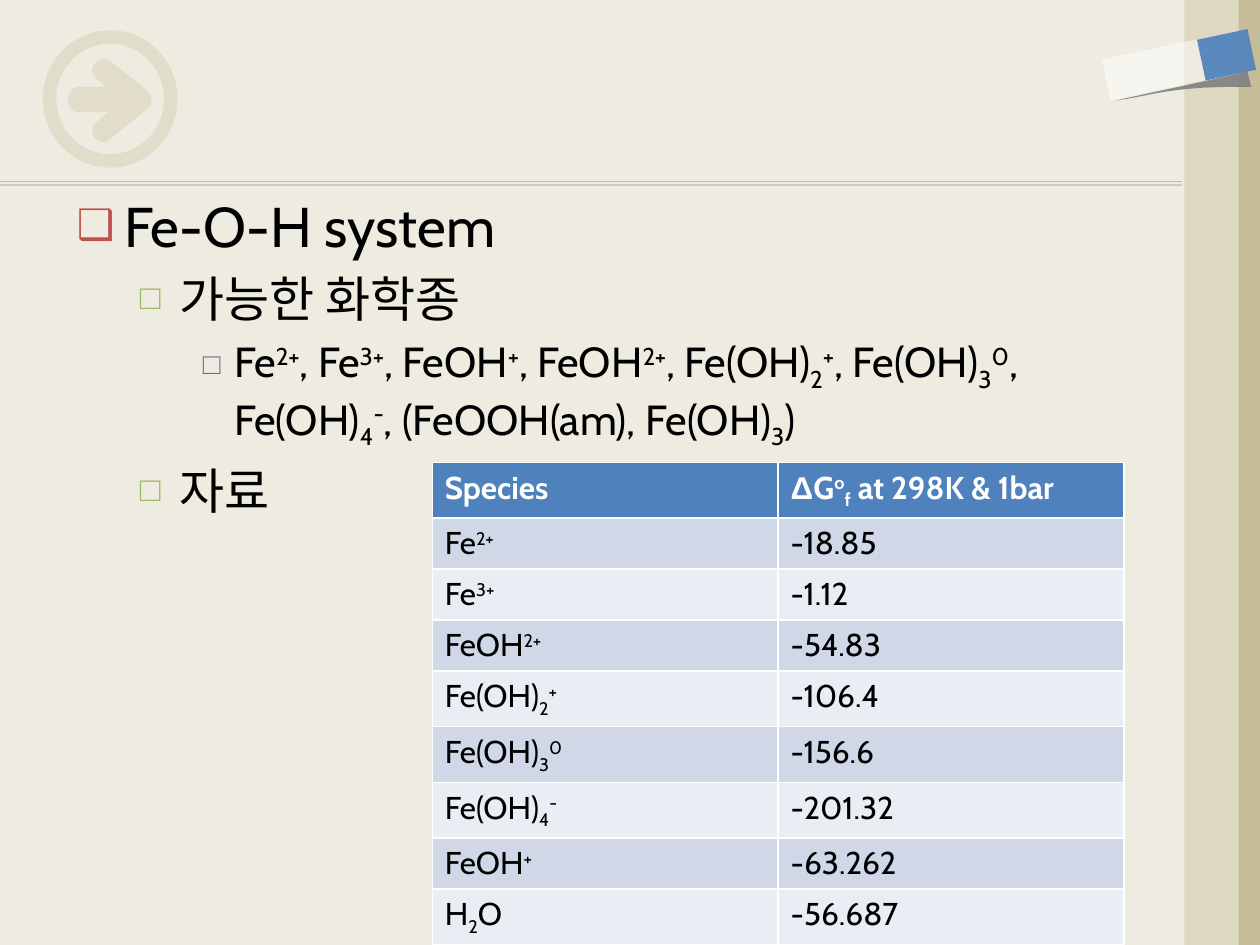
from lxml import etree
from pptx import Presentation
from pptx import util as u
from pptx.dml import color
from pptx.enum import shapes, text
from pptx.oxml import ns

Pt = u.Pt


def rgb(hex_code):
    return color.RGBColor.from_string(hex_code)


def add_node(parent, tag, **attributes):
    values = {key: str(value) for key, value in attributes.items()}
    return etree.SubElement(parent, ns.qn(tag), values)


def bezier(start, control_1, control_2, end, steps=8):
    for step in range(1, steps + 1):
        t = step / steps
        weights = ((1 - t) ** 3, 3 * t * (1 - t) ** 2, 3 * t * t * (1 - t), t ** 3)
        corners = (start, control_1, control_2, end)
        yield tuple(sum(w * c[axis] for w, c in zip(weights, corners)) for axis in (0, 1))


class Deck:
    font = "Cabin"
    ink = "000000"
    accent = "4F81BD"
    tan = "C4BD97"
    bands = ("E9EDF4", "D0D8E8")
    bullets = (("❑", "C0504D", 75, 32), ("□", "9BBB59", 70, 28), ("□", "8064A2", 70, 24))

    def __init__(self):
        self.prs = Presentation()
        self.prs.slide_width, self.prs.slide_height = Pt(720), Pt(540)
        self.slide = self.prs.slides.add_slide(self.prs.slide_layouts[1])
        title = self.slide.shapes.title
        title.element.getparent().remove(title.element)
        background = self.slide.background.fill
        background.solid()
        background.fore_color.rgb = rgb("EEECE1")

    def paint(self, shape, hex_code, opacity=100):
        shape.shadow.inherit = False
        shape.line.fill.background()
        shape.fill.solid()
        shape.fill.fore_color.rgb = rgb(hex_code)
        if opacity < 100:
            srgb = shape.element.spPr.find(".//" + ns.qn("a:srgbClr"))
            add_node(srgb, "a:alpha", val=opacity * 1000)

    def preset(self, kind, box, hex_code, opacity=100, rotation=0):
        shape = self.slide.shapes.add_shape(kind, *map(Pt, box))
        shape.rotation = rotation
        self.paint(shape, hex_code, opacity)
        return shape

    def outline(self, start, segments, hex_code, opacity):
        points = [start]
        for segment in segments:
            points += bezier(points[-1], *segment) if len(segment) == 3 else segment
        vertices = [(Pt(x), Pt(y)) for x, y in points]
        builder = self.slide.shapes.build_freeform(*vertices[0], scale=1.0)
        builder.add_line_segments(vertices[1:], close=True)
        self.paint(builder.convert_to_shape(), hex_code, opacity)

    def rule(self, left, right, y):
        line = self.slide.shapes.add_connector(
            shapes.MSO_CONNECTOR.STRAIGHT, Pt(left), Pt(y), Pt(right), Pt(y))
        line.line.color.rgb = rgb(self.tan)
        line.line.width = Pt(0.75)
        effects = add_node(line._element.spPr, "a:effectLst")
        shadow = add_node(effects, "a:outerShdw", blurRad=0, dist=Pt(2), dir=5400000)
        add_node(add_node(shadow, "a:srgbClr", val="000000"), "a:alpha", val=22000)

    def formula(self, paragraph, marked, size, hex_code, bold=False):
        font = paragraph.font
        font.name, font.size, font.bold = self.font, Pt(size), bold
        font.color.rgb = rgb(hex_code)
        baselines = {"^": 30000, "_": -25000}
        for piece in marked.split("|"):
            run = paragraph.add_run()
            run.text = piece.lstrip("^_")
            if piece[0] in baselines:
                run.font._element.set("baseline", str(baselines[piece[0]]))
            if piece == "Δ":
                run.font.name = "Arial"

    def body(self, box, items):
        outline = self.slide.placeholders[1]
        outline.left, outline.top, outline.width, outline.height = map(Pt, box)
        frame = outline.text_frame
        frame.auto_size = text.MSO_AUTO_SIZE.NONE
        for index, (level, marked) in enumerate(items):
            paragraph = frame.add_paragraph() if index else frame.paragraphs[0]
            paragraph.level = level
            mark, hex_code, percent, size = self.bullets[level]
            properties = paragraph._p.get_or_add_pPr()
            add_node(add_node(properties, "a:buClr"), "a:srgbClr", val=hex_code)
            add_node(properties, "a:buSzPct", val=percent * 1000)
            add_node(properties, "a:buFont", typeface="Arial")
            add_node(properties, "a:buChar", char=mark)
            self.formula(paragraph, marked, size, self.ink)

    def table(self, box, row_height, rows):
        frame = self.slide.shapes.add_table(len(rows), len(rows[0]), *map(Pt, box))
        for r, row in enumerate(rows):
            frame.table.rows[r].height = Pt(row_height)
            for c, marked in enumerate(row):
                cell = frame.table.cell(r, c)
                cell.fill.solid()
                cell.fill.fore_color.rgb = rgb(self.bands[r % 2] if r else self.accent)
                self.formula(cell.text_frame.paragraphs[0], marked, 18,
                             self.ink if r else "FFFFFF", bold=r == 0)
        frame.height = Pt(box[3])


def main():
    deck = Deck()
    kinds = shapes.MSO_SHAPE

    deck.rule(0, 675.4, 103.7)
    deck.outline((85, 52.6), [
        ((80.6, 49), (66.2, 36.7), (61.2, 33.8)),
        ((58.3, 33.1), (56.9, 34.6), (54.7, 36)),
        ((52.6, 37.4), (51.8, 41), (54, 43.9)),
        ((60.5, 49.7),),
        ((43.9, 49.7),),
        ((39.6, 51.1), (38.9, 54.7), (38.9, 56.9)),
        ((38.2, 59.8), (40.3, 63.4), (43.9, 64.1)),
        ((61.9, 64.1),),
        ((53.3, 71.3),),
        ((52.6, 73.4), (52.6, 77), (54, 78.5)),
        ((55.4, 79.9), (57.6, 81.4), (60.5, 81.4)),
        ((72.7, 71.3), (85.7, 61.2), (85.7, 61.2)),
        ((87.1, 59), (86.4, 58.3), (86.4, 56.9)),
        ((86.4, 55.4), (86.4, 54), (85, 52.6)),
    ], deck.tan, 30)
    ring = deck.preset(kinds.DONUT, (24.5, 17.3, 77, 78.5), deck.tan, 30)
    ring.adjustments[0] = 0.1

    deck.preset(kinds.RECTANGLE, (677.5, 0, 42.5, 540), deck.tan)
    deck.preset(kinds.RECTANGLE, (676.8, 0, 31, 540), "DDD9C3")

    deck.outline((712.8, 41), [
        ((715, 49.7),),
        ((668.2, 49), (658.8, 54.7), (637.2, 57.6)),
        ((662.4, 51.8), (687.6, 46.8), (712.8, 41)),
    ], "808080", 90)
    deck.preset(kinds.RECTANGLE, (689, 16.6, 23.8, 29.5), deck.accent, 90, 78)
    deck.preset(kinds.RECTANGLE, (647.3, 12.2, 23.8, 55.4), "FFFFFF", 50, 78)

    deck.body((36.7, 105.8, 638.6, 319.7), [
        (0, "Fe-O-H system"),
        (1, "가능한 화학종"),
        (2, "Fe|^2+|, Fe|^3+|, FeOH|^+|, FeOH|^2+|, Fe(OH)|_2|^+|, Fe(OH)|_3|^0"
            "|, Fe(OH)|_4|^-|, (FeOOH(am), Fe(OH)|_3|)"),
        (1, "자료"),
    ])
    deck.table((247, 264.2, 395.3, 259.2), 24, [
        ("Species", "Δ|G|^o|_f| at 298K & 1bar"),
        ("Fe|^2+", "-18.85"),
        ("Fe|^3+", "-1.12"),
        ("FeOH|^2+", "-54.83"),
        ("Fe(OH)|_2|^+", "-106.4"),
        ("Fe(OH)|_3|^0", "-156.6"),
        ("Fe(OH)|_4|^-", "-201.32"),
        ("FeOH|^+", "-63.262"),
        ("H|_2|O", "-56.687"),
    ])
    deck.prs.save("out.pptx")


if __name__ == "__main__":
    main()
